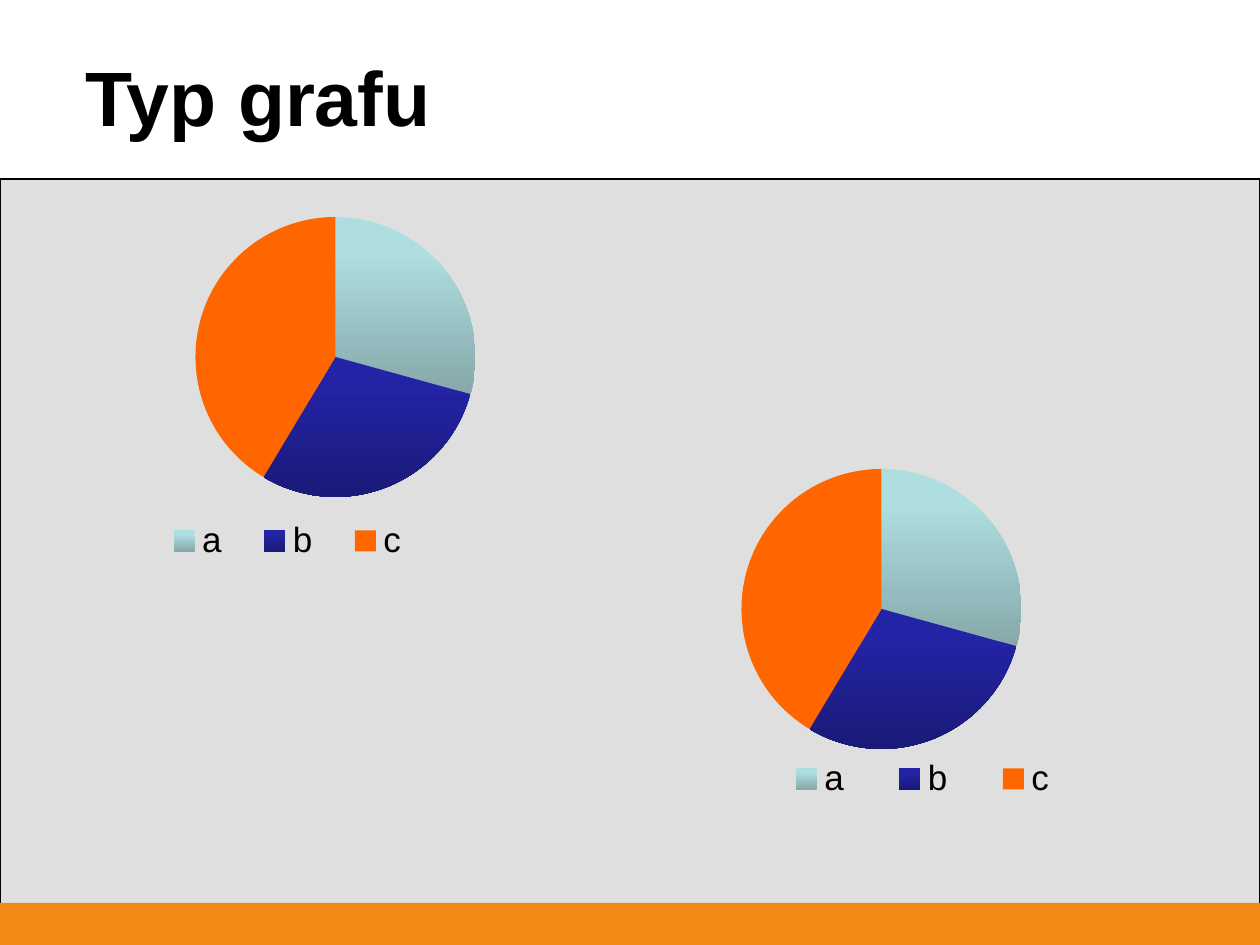
from lxml import etree
from pptx import Presentation
from pptx.chart.data import CategoryChartData
from pptx.dml.color import RGBColor
from pptx.enum.chart import XL_CHART_TYPE as ChartType, XL_LEGEND_POSITION as LegendPosition
from pptx.enum.shapes import MSO_SHAPE as Shape
from pptx.enum.text import MSO_ANCHOR as Anchor, PP_ALIGN as Align
from pptx.oxml.ns import qn
from pptx.util import Pt

EMU_PER_PX = 914400 / 126
BLACK = RGBColor(0x00, 0x00, 0x00)
GREY = RGBColor(0xDF, 0xDF, 0xDF)
AMBER = RGBColor(0xF0, 0x8A, 0x15)
ORANGE = RGBColor(0xFF, 0x66, 0x00)
TEAL_LIGHT = RGBColor(0xAE, 0xDE, 0xE0)
TEAL_DARK = RGBColor(0x86, 0xA8, 0xAA)
BLUE_LIGHT = RGBColor(0x23, 0x23, 0xA5)
BLUE_DARK = RGBColor(0x1A, 0x1A, 0x78)

CHART_WIDTH, CHART_HEIGHT = 630, 378


def px(*lengths):
    return [round(length * EMU_PER_PX) for length in lengths]


def set_layout(element, left, top, width, height, inner=False):
    """Place a chart part; lengths are px within the chart frame."""
    for old in element.findall(qn("c:layout")):
        element.remove(old)
    layout = etree.Element(qn("c:layout"))
    manual = etree.SubElement(layout, qn("c:manualLayout"))
    settings = [("layoutTarget", "inner")] if inner else []
    settings += [("xMode", "edge"), ("yMode", "edge"),
                 ("x", left / CHART_WIDTH), ("y", top / CHART_HEIGHT),
                 ("w", width / CHART_WIDTH), ("h", height / CHART_HEIGHT)]
    for tag, value in settings:
        etree.SubElement(manual, qn(f"c:{tag}")).set("val", str(value))
    position = element.find(qn("c:legendPos"))
    element.insert(0 if position is None else 1, layout)


presentation = Presentation()
presentation.slide_width, presentation.slide_height = px(1260, 945)
slide = presentation.slides.add_slide(presentation.slide_layouts[5])

# Grey panel and amber footer band
panel = slide.shapes.add_shape(Shape.RECTANGLE, *px(0, 179, 1260, 766))
panel.line.color.rgb = BLACK
panel.line.width = Pt(0.75)
footer = slide.shapes.add_shape(Shape.RECTANGLE, *px(0, 903, 1260, 42))
footer.line.fill.background()
for shape, color in ((panel, GREY), (footer, AMBER)):
    shape.shadow.inherit = False
    shape.fill.solid()
    shape.fill.fore_color.rgb = color

# Title
title = slide.shapes.title
title.left, title.top, title.width, title.height = px(73, 53, 977, 97)
title.text_frame.vertical_anchor = Anchor.MIDDLE
title.text_frame.text = "Typ grafu"
paragraph = title.text_frame.paragraphs[0]
paragraph.alignment = Align.LEFT
paragraph.line_spacing = 0.9
paragraph.font.name = "Arial"
paragraph.font.size = Pt(44)
paragraph.font.bold = True
paragraph.font.color.rgb = BLACK

# Two pies with the same data; only the place and the legend differ
data = CategoryChartData()
data.categories = ["a", "b", "c"]
data.add_series("Series 1", (29, 29, 41))
slice_colors = [(TEAL_LIGHT, TEAL_DARK), (BLUE_LIGHT, BLUE_DARK), (ORANGE,)]

for left, top, legend_box in ((21, 199, (122, 321, 289, 42)),
                              (567, 451, (185, 307, 341, 42))):
    frame = slide.shapes.add_chart(
        ChartType.PIE, *px(left, top, CHART_WIDTH, CHART_HEIGHT), data)
    chart = frame.chart
    chart.has_title = False
    chart.font.name = "Arial"
    chart.font.size = Pt(10)
    chart.font.color.rgb = BLACK
    chart.has_legend = True
    legend = chart.legend
    legend.position = LegendPosition.BOTTOM
    legend.include_in_layout = False
    legend.font.name = "Arial"
    legend.font.size = Pt(20)
    legend.font.color.rgb = BLACK

    plot = chart.plots[0]
    plot.vary_by_categories = True
    for index, colors in enumerate(slice_colors):
        point = plot.series[0].points[index]
        fill = point.format.fill
        if len(colors) == 1:
            fill.solid()
            fill.fore_color.rgb = colors[0]
        else:
            fill.gradient()
            fill.gradient_angle = 270
            for stop, color, position in zip(fill.gradient_stops, colors, (0.2, 1)):
                stop.color.rgb = color
                stop.position = position
        point.format.line.fill.background()

    plot_area = chart.element.find(".//" + qn("c:plotArea"))
    set_layout(plot_area, 174, 18, 281, 280, inner=True)
    set_layout(chart.element.find(".//" + qn("c:legend")), *legend_box)

presentation.save("out.pptx")
